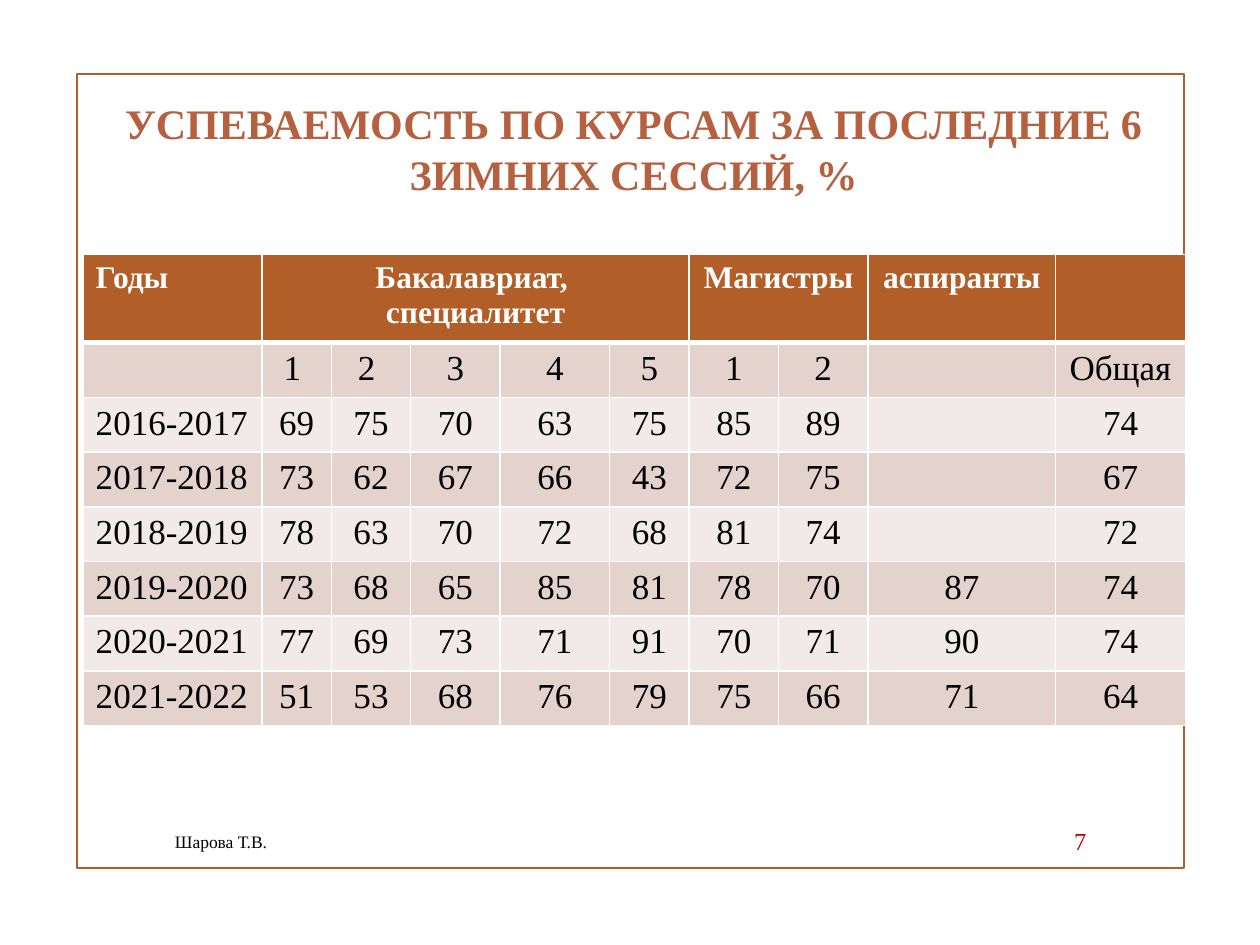
from lxml import etree
from pptx import Presentation
from pptx import util as u
from pptx.dml.color import RGBColor
from pptx.enum import shapes, text
from pptx.oxml import ns

FONT = "Times New Roman"
COLORS = {"rust": "B15E28", "title": "B5603F", "red": "C00000", "black": "000000",
          "white": "FFFFFF", "dark_band": "E4D2CD", "light_band": "F2EAE8"}
LEFT, CENTER, RIGHT = text.PP_ALIGN.LEFT, text.PP_ALIGN.CENTER, text.PP_ALIGN.RIGHT


def rgb(name):
    return RGBColor.from_string(COLORS[name])


def write(tf, content, color, align, **font):
    """Fill a text frame, one paragraph per line of content."""
    tf.word_wrap = True
    for i, line in enumerate(content.split("\n")):
        p = tf.paragraphs[0] if i == 0 else tf.add_paragraph()
        p.alignment = align
        r = p.add_run()
        r.text = line
        r.font.color.rgb = rgb(color)
        for name, value in {"name": FONT, **font}.items():
            setattr(r.font, name, value)


prs = Presentation()
prs.slide_width, prs.slide_height = u.Inches(10), u.Inches(7.5)
s = prs.slides.add_slide(prs.slide_layouts[6])

frame = s.shapes.add_shape(shapes.MSO_SHAPE.RECTANGLE, u.Inches(0.61), u.Inches(0.59),
                           u.Inches(8.79), u.Inches(6.3))
frame.shadow.inherit = False
frame.fill.background()
frame.line.color.rgb = rgb("rust")
frame.line.width = u.Pt(1.25)

# Title, page number and author
TEXTS = [
    ((0.53, 0.55, 9, 1.25), "УСПЕВАЕМОСТЬ ПО КУРСАМ ЗА ПОСЛЕДНИЕ 6 ЗИМНИХ СЕССИЙ, %",
     "title", CENTER, 24, True),
    ((8.29, 6.52, 0.43, 0.31), "7", "red", RIGHT, 14, False),
    ((1.29, 6.52, 5.58, 0.31), "Шарова Т.В.", "black", LEFT, 10, False),
]
for box, content, color, align, size, bold in TEXTS:
    tf = s.shapes.add_textbox(*map(u.Inches, box)).text_frame
    tf.vertical_anchor = text.MSO_ANCHOR.MIDDLE
    write(tf, content, color, align, size=u.Pt(size), bold=bold)

# Results table
COLS = [1.42, 0.55, 0.63, 0.71, 0.87, 0.63, 0.71, 0.71, 1.49, 1.03]
ROWS = [0.65] + [0.43] * 7
DATA = [
    ["Годы", "Бакалавриат, \nспециалитет", "", "", "", "", "Магистры", "", "аспиранты", ""],
    ["", "1 ", "2 ", "3", "4", "5", "1", "2", "", "Общая"],
    ["2016-2017", "69", "75", "70", "63", "75", "85", "89", "", "74"],
    ["2017-2018", "73", "62", "67", "66", "43", "72", "75", "", "67"],
    ["2018-2019", "78", "63", "70", "72", "68", "81", "74", "", "72"],
    ["2019-2020", "73", "68", "65", "85", "81", "78", "70", "87", "74"],
    ["2020-2021", "77", "69", "73", "71", "91", "70", "71", "90", "74"],
    ["2021-2022", "51", "53", "68", "76", "79", "75", "66", "71", "64"],
]
table = s.shapes.add_table(len(ROWS), len(COLS), u.Inches(0.66), u.Inches(2.02),
                           u.Inches(sum(COLS)), u.Inches(sum(ROWS))).table
for column, width in zip(table.columns, COLS):
    column.width = u.Inches(width)
for row, height in zip(table.rows, ROWS):
    row.height = u.Inches(height)
for first, last in [(1, 5), (6, 7)]:
    table.cell(0, first).merge(table.cell(0, last))

for i, values in enumerate(DATA):
    header = i == 0
    fill = "rust" if header else "dark_band" if i % 2 else "light_band"
    for j, value in enumerate(values):
        cell = table.cell(i, j)
        tcPr = cell._tc.get_or_add_tcPr()
        widths = {"lnL": 1, "lnR": 1, "lnT": 3 if i == 1 else 1, "lnB": 3 if header else 1}
        for side, width in widths.items():
            ln = etree.SubElement(tcPr, ns.qn(f"a:{side}"), w=str(u.Pt(width)))
            solid = etree.SubElement(ln, ns.qn("a:solidFill"))
            etree.SubElement(solid, ns.qn("a:srgbClr"), val=COLORS["white"])
        cell.fill.solid()
        cell.fill.fore_color.rgb = rgb(fill)
        if value:
            write(cell.text_frame, value, "white" if header else "black",
                  LEFT if j == 0 else CENTER, size=u.Pt(18 if header else 20), bold=header)

prs.save("out.pptx")
